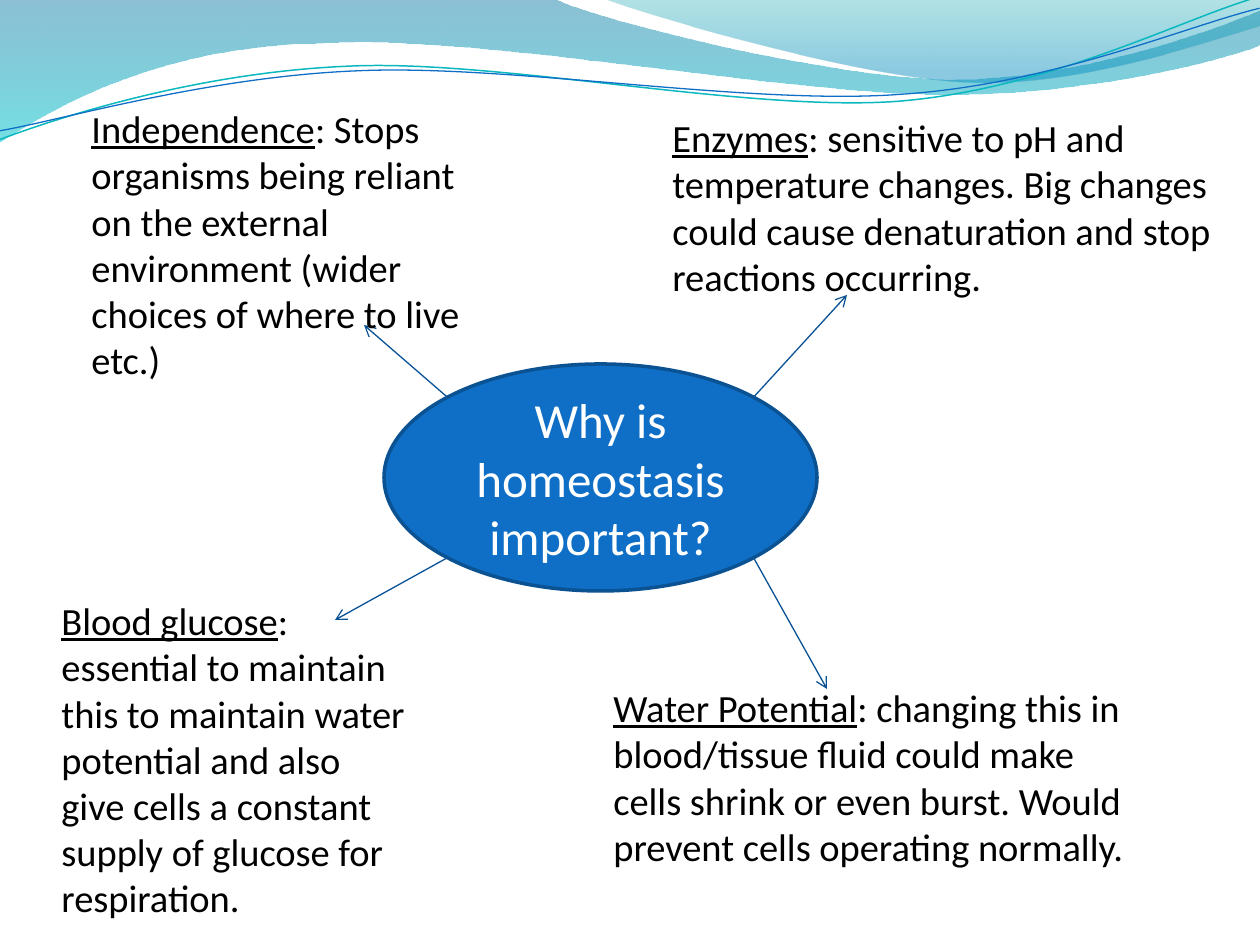
from math import sqrt

from lxml.etree import SubElement
from pptx import Presentation
from pptx.dml.color import RGBColor
from pptx.enum.shapes import MSO_CONNECTOR, MSO_SHAPE
from pptx.enum.text import MSO_ANCHOR, MSO_AUTO_SIZE, PP_ALIGN
from pptx.oxml.ns import qn
from pptx.util import Pt

EMU_PER_PX = 914400 / 126
FONT = "Calibri"
BLACK = RGBColor(0x00, 0x00, 0x00)
WHITE = RGBColor(0xFF, 0xFF, 0xFF)
BLUE = RGBColor(0x0F, 0x6F, 0xC6)
DARK_BLUE = RGBColor(0x0B, 0x52, 0x92)
ARROW_BLUE = RGBColor(0x09, 0x52, 0x95)
TEAL = RGBColor(0x0A, 0xB8, 0xBF)
BAND_TOP = RGBColor(0x00, 0x74, 0xA1)
BAND_BOTTOM = RGBColor(0x00, 0xC6, 0xCF)
CREST_TOP = RGBColor(0x00, 0xA1, 0xA9)
CREST_BOTTOM = RGBColor(0x00, 0x8B, 0xBF)

BAND = [(0, 0), (554, -1), (600, 21, 837, 79, 955, 79),
        (1075, 79, 1207, 33, 1260, 11), (1261, 45),
        (1239, 55, 1096, 96, 940, 94), (784, 94, 481, 35, 324, 43),
        (163, 45, 58, 105, -1, 142), (0, 0)]
CREST = [(604, -1), (641, 14, 859, 78, 969, 82),
         (1079, 87, 1211, 40, 1260, 26), (1260, 0), (604, -1)]
WAVE_TILT = 357.3
TEAL_WAVE = [(-3, 110), (59, 90, 199, 52, 350, 53),
             (499, 53, 745, 118, 896, 114), (1049, 109, 1184, 45, 1260, 27)]
BLUE_WAVE = [(-2, 101), (57, 94, 207, 57, 357, 58),
             (509, 58, 750, 112, 902, 107), (1052, 104, 1189, 52, 1262, 38)]

OVAL = (384, 364, 433, 227)
REASONS = [
    ("Enzymes", ": sensitive to pH and temperature changes. Big changes could "
     "cause denaturation and stop reactions occurring.",
     (660, 108, 581, 199), (1, -1), (847, 295)),
    ("Water Potential", ": changing this in blood/tissue fluid could make cells "
     "shrink or even burst. Would prevent cells operating normally.",
     (601, 678, 561, 199), (1, 1), (827, 689)),
    ("Blood glucose", ": essential to maintain this to maintain water potential "
     "and also give cells a constant supply of glucose for respiration.",
     (49, 591, 374, 339), (-1, 1), (335, 620)),
    ("Independence", ": Stops organisms being reliant on the external environment "
     "(wider choices of where to live etc.)",
     (79, 99, 423, 292), (-1, -1), (364, 325)),
]


def px(*lengths):
    """Turn lengths in px into EMU."""
    return [round(length * EMU_PER_PX) for length in lengths]


def oval_corner(oval, side):
    """Find the diagonal connection site of an oval."""
    left, top, width, height = oval
    return (left + width / 2 * (1 + side[0] / sqrt(2)),
            top + height / 2 * (1 + side[1] / sqrt(2)))


class SlideBuilder:
    """Holds the style and the current slide."""

    def __init__(self, slide):
        """Keep the shapes of the slide."""
        self.shapes = slide.shapes

    def outline(self, path, close):
        """Add a freeform of lines (2 numbers) and cubic curves (6 numbers)."""
        start, *points = [tuple(px(*segment[index:index + 2])) for segment in path
                          for index in range(0, len(segment), 2)]
        builder = self.shapes.build_freeform(*start)
        builder.add_line_segments(points, close=close)
        shape = builder.convert_to_shape()
        shape.shadow.inherit = False
        drawing = next(shape.element.iter(qn("a:path")))
        lines = iter(drawing.findall(qn("a:lnTo")))
        for segment in path[1:]:
            curve = next(lines)
            if len(segment) == 6:
                curve.tag = qn("a:cubicBezTo")
                for _ in range(2):
                    extra = next(lines)
                    curve.append(extra[0])
                    drawing.remove(extra)
        return shape

    def ribbon(self, path, stops):
        """Add an area with a translucent vertical gradient."""
        shape = self.outline(path, True)
        shape.line.fill.background()
        shape.fill.gradient()
        shape.fill.gradient_angle = 270
        for stop, (position, color, _) in zip(shape.fill.gradient_stops, stops):
            stop.position = position
            stop.color.rgb = color
        gradient = shape.element.spPr.find(qn("a:gradFill"))
        for color, (_, _, opacity) in zip(gradient.iter(qn("a:srgbClr")), stops):
            SubElement(color, qn("a:alpha")).set("val", str(opacity * 1000))

    def wave(self, path, color, width):
        """Add a tilted open curve."""
        shape = self.outline(path, False)
        shape.rotation = WAVE_TILT
        shape.fill.background()
        shape.line.color.rgb = color
        shape.line.width = Pt(width)

    def style(self, span, size, color):
        """Set the font of one run."""
        span.font.name = FONT
        span.font.size = Pt(size)
        span.font.color.rgb = color

    def question(self, text, oval):
        """Add the central oval with its question."""
        shape = self.shapes.add_shape(MSO_SHAPE.OVAL, *px(*oval))
        shape.shadow.inherit = False
        shape.fill.solid()
        shape.fill.fore_color.rgb = BLUE
        shape.line.color.rgb = DARK_BLUE
        shape.line.width = Pt(2)
        frame = shape.text_frame
        frame.text = text
        frame.vertical_anchor = MSO_ANCHOR.MIDDLE
        para = frame.paragraphs[0]
        para.alignment = PP_ALIGN.CENTER
        self.style(para.runs[0], 28, WHITE)

    def arrow(self, start, end):
        """Add an arrow with an open head."""
        line = self.shapes.add_connector(MSO_CONNECTOR.STRAIGHT, *px(*start, *end))
        line.line.color.rgb = ARROW_BLUE
        line.line.width = Pt(0.75)
        properties = line.element.spPr
        SubElement(properties.find(qn("a:ln")), qn("a:tailEnd")).set("type", "arrow")
        SubElement(properties, qn("a:effectLst"))

    def reason(self, heading, detail, place):
        """Add a text box that opens with an underlined heading."""
        box = self.shapes.add_textbox(*px(*place))
        frame = box.text_frame
        frame.word_wrap = True
        frame.auto_size = MSO_AUTO_SIZE.SHAPE_TO_FIT_TEXT
        para = frame.paragraphs[0]
        for text, underline in ((heading, True), (detail, False)):
            span = para.add_run()
            span.text = text
            span.font.underline = underline
            self.style(span, 22, BLACK)


def main():
    """Build and save the slide."""
    deck = Presentation()
    deck.slide_width, deck.slide_height = px(1260, 945)
    page = SlideBuilder(deck.slides.add_slide(deck.slide_layouts[6]))
    page.ribbon(BAND, [(0, BAND_TOP, 45), (1, BAND_BOTTOM, 55)])
    page.ribbon(CREST, [(0, CREST_TOP, 30), (0.8, CREST_BOTTOM, 45)])
    page.wave(TEAL_WAVE, TEAL, 0.85)
    page.wave(BLUE_WAVE, BLUE, 0.75)
    page.question("Why is homeostasis important?", OVAL)
    for heading, detail, place, side, tip in REASONS:
        page.arrow(oval_corner(OVAL, side), tip)
        page.reason(heading, detail, place)
    deck.save("out.pptx")


if __name__ == "__main__":
    main()
